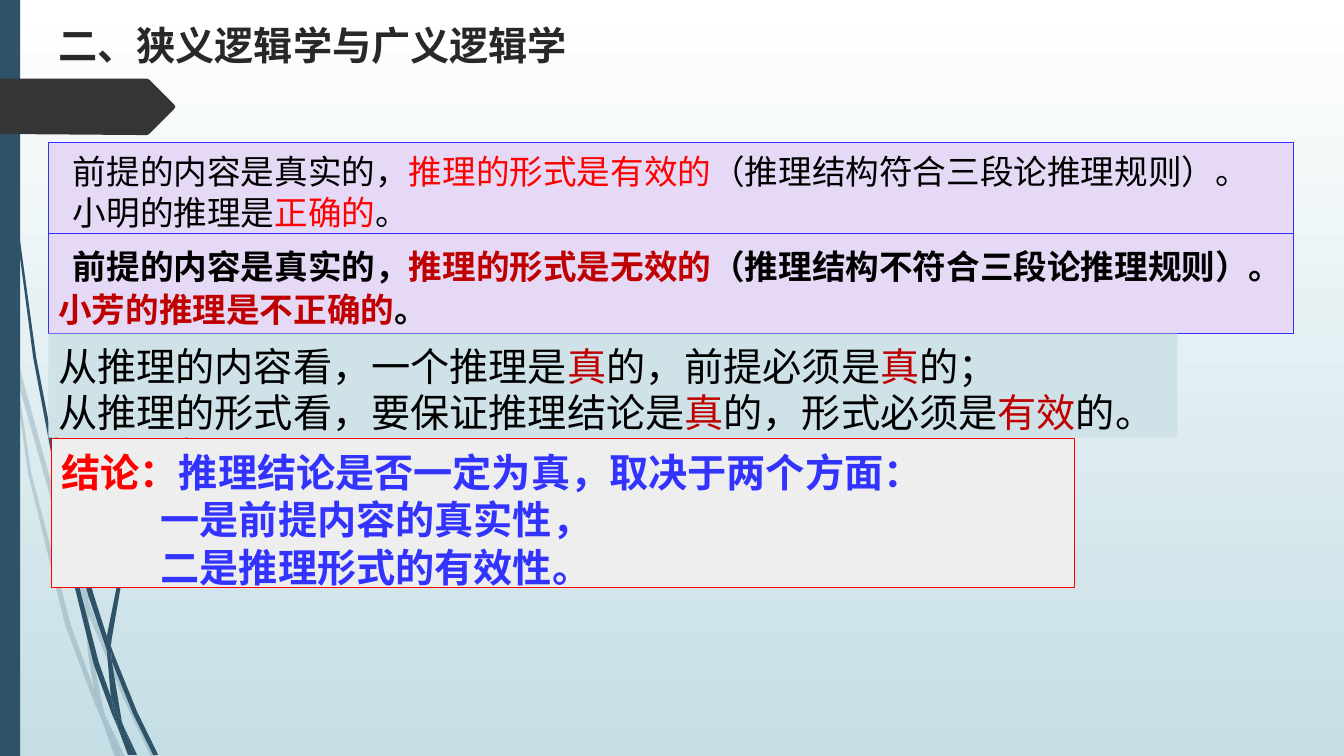
"""Build the slide on narrow and broad logic."""
from dataclasses import dataclass
from typing import Optional

from lxml import etree
from pptx import Presentation
from pptx.dml.color import RGBColor
from pptx.enum.shapes import MSO_SHAPE as Shape
from pptx.enum.text import MSO_ANCHOR as Anchor, PP_ALIGN as Align
from pptx.oxml.ns import qn
from pptx.util import Cm, Pt

FONT = "Noto Sans CJK SC"
UNIT = Cm(0.0254)
WHITE = RGBColor(0xFF, 0xFF, 0xFF)
BLACK = RGBColor(0x00, 0x00, 0x00)
SKY = RGBColor(0xC5, 0xDE, 0xE5)
NAVY = RGBColor(0x2E, 0x53, 0x69)
CHARCOAL = RGBColor(0x35, 0x35, 0x35)
INK = RGBColor(0x28, 0x28, 0x28)
LILAC = RGBColor(0xE5, 0xD9, 0xF5)
MIST = RGBColor(0xCF, 0xE2, 0xE7)
GREY = RGBColor(0xEE, 0xEE, 0xEE)
BLUE = RGBColor(0x33, 0x33, 0xFF)
RED = RGBColor(0xFF, 0x00, 0x00)
CRIMSON = RGBColor(0xC0, 0x00, 0x00)

Points = list[tuple[int, int]]
Run = tuple[str, RGBColor]


@dataclass
class Line:
    runs: list[Run]
    indent: float = 0


@dataclass
class Panel:
    left: float
    top: float
    width: float
    height: float
    lines: list[Line]
    size: int
    spacing: float
    bold: bool = False
    fill: Optional[RGBColor] = None
    border: Optional[RGBColor] = None


PALE_WISPS: list[Points] = [
    [(11, 350), (9, 322), (0, 282), (0, 299), (10, 344)],
    [(58, 522), (84, 599), (85, 586), (62, 520), (14, 345), (17, 376)],
    [(92, 607), (88, 596), (88, 610), (123, 694), (150, 751), (155, 751), (127, 692)],
    [(119, 751), (124, 751), (105, 711)],
    [(93, 683), (70, 619), (31, 469), (17, 376), (11, 350), (28, 470), (65, 621),
     (92, 693), (101, 714), (99, 707)],
    [(84, 599), (87, 646), (93, 683), (96, 692), (105, 711), (103, 706), (91, 646),
     (88, 610), (88, 608)],
    [(88, 584), (110, 462), (160, 349), (229, 245), (268, 198), (290, 175), (312, 154),
     (312, 153), (289, 175), (268, 197), (228, 244), (158, 348), (107, 461), (85, 584),
     (85, 586), (88, 596)],
    [(101, 714), (114, 751), (119, 751)],
    [(88, 608), (88, 596), (85, 586), (84, 599)],
    [(96, 692), (93, 683), (99, 707), (101, 714), (119, 751), (105, 711)],
]
DARK_WISPS: list[Points] = [
    [(7, 110), (17, 233), (33, 355), (56, 477), (57, 481), (55, 457), (55, 453),
     (36, 355), (19, 232), (8, 109), (5, 48), (4, 0), (3, 0), (4, 48)],
    [(88, 592), (106, 645), (106, 631), (93, 590), (60, 472), (64, 505)],
    [(113, 649), (110, 641), (111, 656), (132, 708), (152, 749), (157, 749), (136, 706)],
    [(110, 691), (98, 657), (72, 556), (64, 505), (57, 477), (68, 557), (93, 659),
     (111, 708), (117, 722), (116, 717)],
    [(60, 472), (58, 453), (54, 349), (58, 245), (63, 193), (70, 141), (62, 193),
     (56, 245), (52, 349), (55, 449)],
    [(133, 749), (136, 749), (122, 719)],
    [(111, 633), (125, 552), (158, 476), (205, 406), (231, 374), (245, 359), (261, 344),
     (260, 344), (245, 358), (231, 373), (204, 405), (156, 474), (122, 551), (106, 631),
     (110, 641)],
    [(117, 722), (127, 749), (131, 749)],
    [(106, 645), (110, 691), (116, 706), (122, 719), (121, 716), (111, 656), (109, 651)],
    [(106, 645), (109, 651), (111, 656), (110, 641), (106, 631)],
    [(116, 706), (110, 691), (116, 717), (117, 722), (130, 749), (133, 749), (122, 719)],
]
ARROW_TAB: Points = [
    (173, 108), (148, 133), (146, 134), (136, 134), (0, 133), (0, 78), (146, 78),
    (148, 79), (173, 104), (174, 106),
]

PANELS = [
    Panel(1.22, 5.89, 31.39, 2.51, [
        Line([("前提的内容是真实的，", BLACK), ("推理的形式是无效的", CRIMSON),
              ("（推理结构不符合三段论推理规则）。", BLACK),
              ("小芳的推理是不正确的", CRIMSON), ("。", BLACK)], 0.37),
    ], 24, 31, True, LILAC, BLUE),
    Panel(1.22, 0.3, 13.77, 1.45, [
        Line([("二、狭义逻辑学与广义逻辑学", INK)]),
    ], 28, 33.6, True),
    Panel(1.22, 8.41, 28.45, 2.62, [
        Line([("从推理的内容看，一个推理是", BLACK), ("真", CRIMSON),
              ("的，前提必须是", BLACK), ("真", CRIMSON), ("的；", BLACK)]),
        Line([("从推理的形式看，要保证推理结论是", BLACK), ("真", CRIMSON),
              ("的，形式必须是", BLACK), ("有效", CRIMSON), ("的。", BLACK)]),
    ], 28, 33, False, MIST),
    Panel(1.3, 11.05, 25.78, 3.76, [
        Line([("结论：", RED), ("推理结论是否一定为真，取决于两个方面：", BLUE)]),
        Line([("一是前提内容的真实性，", BLUE)], 2.5),
        Line([("二是推理形式的有效性。", BLUE)], 2.5),
    ], 28, 34, True, GREY, RED),
    Panel(1.22, 3.58, 31.39, 2.31, [
        Line([("前提的内容是真实的，", BLACK), ("推理的形式是有效的", RED),
              ("（推理结构符合三段论推理规则）。", BLACK)], 0.37),
        Line([("小明的推理是", BLACK), ("正确的", RED), ("。", BLACK)], 0.37),
    ], 24, 28.8, False, LILAC, BLUE),
]


def paint(sp, color: RGBColor, opacity: int = 100) -> None:
    """Give a shape a plain fill without outline or shadow."""
    sp.shadow.inherit = False
    sp.fill.solid()
    sp.fill.fore_color.rgb = color
    sp.line.fill.background()
    if opacity < 100:
        clr = sp.fill._xPr.find(qn("a:solidFill"))[0]
        etree.SubElement(clr, qn("a:alpha")).set("val", str(opacity * 1000))


def draw_outline(s, points: Points, color: RGBColor, opacity: int = 100) -> None:
    """Draw a closed outline given in layout units."""
    builder = s.shapes.build_freeform(*points[0], scale=UNIT)
    builder.add_line_segments(points[1:], close=True)
    paint(builder.convert_to_shape(), color, opacity)


def draw_panel(s, panel: Panel) -> None:
    """Draw a text panel with its coloured runs."""
    box = [Cm(v) for v in (panel.left, panel.top, panel.width, panel.height)]
    if panel.fill is None:
        sp = s.shapes.add_textbox(*box)
    else:
        sp = s.shapes.add_shape(Shape.RECTANGLE, *box)
        paint(sp, panel.fill)
    if panel.border is not None:
        sp.line.color.rgb = panel.border
        sp.line.width = Pt(0.75)
    tf = sp.text_frame
    tf.word_wrap = True
    tf.vertical_anchor = Anchor.TOP
    tf.margin_top = Cm(0.23)
    tf.margin_bottom = Cm(0)
    tf.margin_right = Cm(0.15)
    for i, line in enumerate(panel.lines):
        p = tf.paragraphs[0] if i == 0 else tf.add_paragraph()
        p.alignment = Align.LEFT
        p.line_spacing = Pt(panel.spacing)
        p.font.size = Pt(panel.size)
        p.font.bold = panel.bold
        p.font.name = FONT
        etree.SubElement(p.font._rPr, qn("a:ea")).set("typeface", FONT)
        p._p.get_or_add_pPr().set("indent", str(Cm(line.indent)))
        for text, color in line.runs:
            r = p.add_run()
            r.text = text
            r.font.color.rgb = color


def main() -> None:
    """Assemble and save the slide."""
    prs = Presentation()
    prs.slide_width, prs.slide_height = Cm(33.87), Cm(19.05)
    s = prs.slides.add_slide(prs.slide_layouts[6])
    bg = s.background.fill
    bg.gradient()
    bg.gradient_angle = 270
    for stop, color, position in zip(bg.gradient_stops, (WHITE, SKY), (0, 1)):
        stop.color.rgb = color
        stop.position = position
    for wisps, opacity in ((PALE_WISPS, 20), (DARK_WISPS, 100)):
        for points in wisps:
            draw_outline(s, points, NAVY, opacity)
    paint(s.shapes.add_shape(Shape.RECTANGLE, 0, 0, Cm(0.51), prs.slide_height), NAVY)
    draw_outline(s, ARROW_TAB, CHARCOAL)
    for panel in PANELS:
        draw_panel(s, panel)
    prs.save("out.pptx")


if __name__ == "__main__":
    main()
